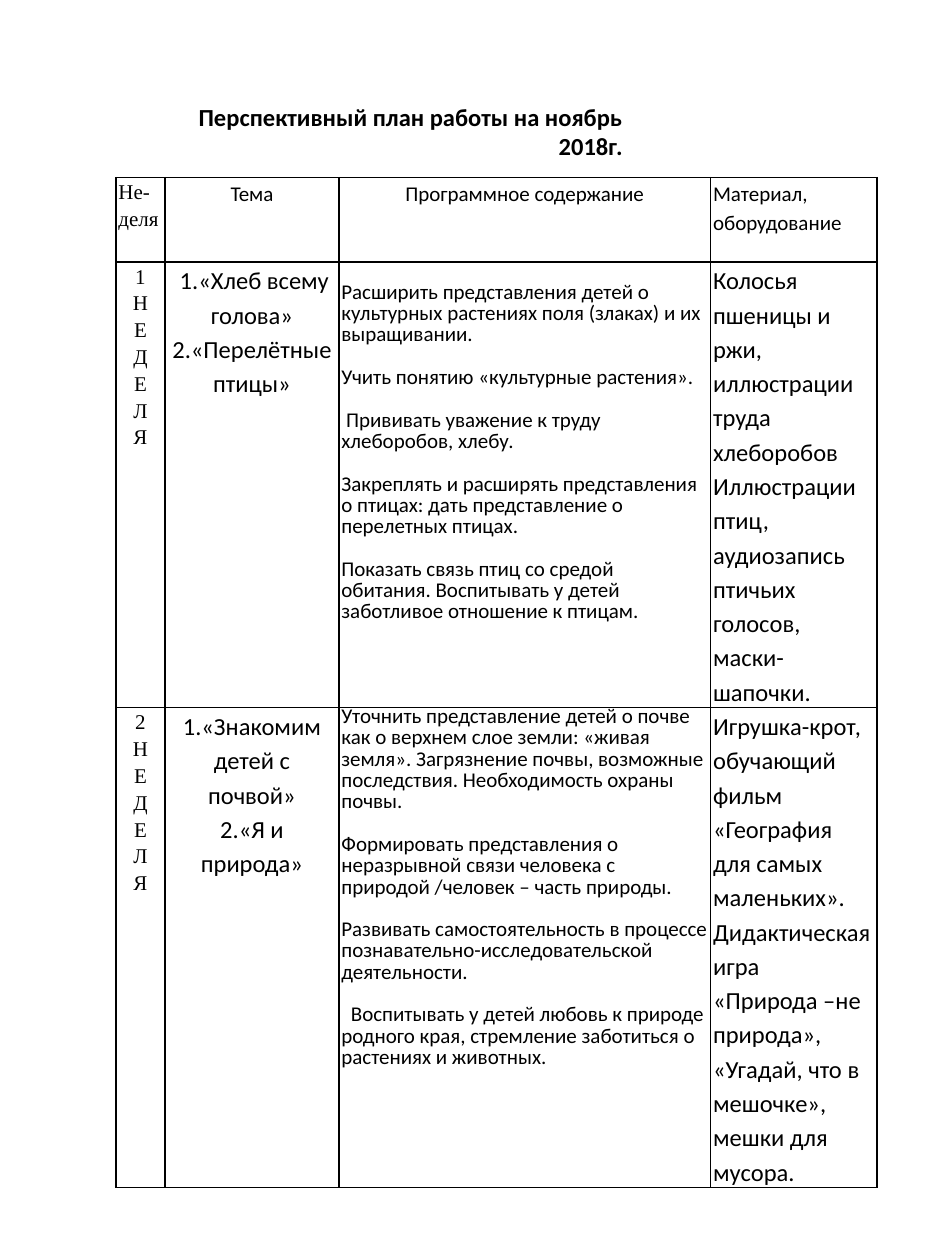
from dataclasses import dataclass

from lxml.etree import SubElement
from pptx import Presentation
from pptx.dml.color import RGBColor
from pptx.enum.text import MSO_ANCHOR, PP_ALIGN
from pptx.oxml.ns import qn
from pptx.util import Inches, Pt

BLACK, WHITE = "000000", "FFFFFF"
LINE_PITCH = Pt(12.2)
SPACE_WIDTH = 2.7
COLUMN_WIDTHS = [0.39, 1.38, 2.95, 1.32]
ROW_HEIGHTS = [0.67, 3.53, 3.66]


@dataclass
class CellText:
    """Paragraphs of one table cell and their formatting."""
    paragraphs: list[str]
    size: int = 12
    font: str = "Calibri"
    centered: bool = False
    spaced: bool = False
    top_margin: int = 0


def color(value: str) -> RGBColor:
    """Turn a hex string into a colour."""
    return RGBColor.from_string(value)


def set_font(paragraph, name: str, size: int, bold: bool = False) -> None:
    """Set the font of a whole paragraph."""
    font = paragraph.font
    font.name, font.size, font.bold = name, Pt(size), bold
    font.color.rgb = color(BLACK)


def add_borders(cell) -> None:
    """Draw a thin black line on every side of a cell."""
    properties = cell._tc.get_or_add_tcPr()
    for side in ("lnL", "lnR", "lnT", "lnB"):
        line = SubElement(properties, qn(f"a:{side}"), w=str(Pt(1)))
        fill = SubElement(line, qn("a:solidFill"))
        SubElement(fill, qn("a:srgbClr"), val=BLACK)


def fill_cell(cell, content: CellText) -> None:
    """Write and format one table cell."""
    add_borders(cell)
    cell.fill.solid()
    cell.fill.fore_color.rgb = color(WHITE)
    cell.margin_left = cell.margin_right = Inches(0.02)
    cell.margin_top, cell.margin_bottom = content.top_margin, 0
    frame = cell.text_frame
    for index, text in enumerate(content.paragraphs):
        paragraph = frame.add_paragraph() if index else frame.paragraphs[0]
        words = text.lstrip(" ")
        paragraph.text = words
        paragraph.alignment = PP_ALIGN.CENTER if content.centered else PP_ALIGN.LEFT
        paragraph.line_spacing = LINE_PITCH if content.spaced else 1.15
        if content.spaced and index:
            paragraph.space_before = LINE_PITCH
        if words != text:
            indent = Pt(SPACE_WIDTH * (len(text) - len(words)))
            paragraph._p.get_or_add_pPr().set("indent", str(indent))
        set_font(paragraph, content.font, content.size)


def week(number: int) -> CellText:
    """Spell a week label downwards, one letter a line."""
    return CellText(list(f"{number}НЕДЕЛЯ"), font="Times New Roman", centered=True)


def topics(*paragraphs: str) -> CellText:
    """Describe a cell of the topic column."""
    return CellText(list(paragraphs), size=14, centered=True)


def goals(*paragraphs: str, top_margin: int = 0) -> CellText:
    """Describe a cell of the programme column."""
    return CellText(list(paragraphs), spaced=True, top_margin=top_margin)


def materials(*paragraphs: str) -> CellText:
    """Describe a cell of the materials column."""
    return CellText(list(paragraphs), size=14)


PLAN = [
    [
        CellText(["Не-деля"], font="Times New Roman"),
        CellText(["Тема"], centered=True),
        CellText(["Программное содержание"], centered=True),
        CellText(["Материал, оборудование"]),
    ],
    [
        week(1),
        topics(" 1.«Хлеб всему голова»", "2.«Перелётные птицы»"),
        goals(
            "Расширить представления детей о культурных растениях поля (злаках) и их выращивании.",
            "Учить понятию «культурные растения».",
            " Прививать уважение к труду хлеборобов, хлебу.",
            "Закреплять и расширять представления о птицах: дать представление о перелетных птицах.",
            "Показать связь птиц со средой обитания. Воспитывать у детей заботливое отношение к птицам.",
            top_margin=LINE_PITCH,
        ),
        materials(
            "Колосья пшеницы и ржи, иллюстрации труда хлеборобов",
            "Иллюстрации птиц, аудиозапись птичьих голосов, маски-шапочки.",
        ),
    ],
    [
        week(2),
        topics("1.«Знакомим детей с почвой»", "2.«Я и природа»"),
        goals(
            "Уточнить представление детей о почве как о верхнем слое земли: «живая земля». "
            "Загрязнение почвы, возможные последствия. Необходимость охраны почвы.",
            "Формировать представления о неразрывной связи человека с природой /человек – часть природы.",
            "Развивать самостоятельность в процессе познавательно-исследовательской деятельности.",
            "  Воспитывать у детей любовь к природе родного края, стремление заботиться о растениях и животных.",
        ),
        materials(
            "Игрушка-крот, обучающий фильм «География для самых маленьких».",
            "Дидактическая игра",
            "«Природа –не природа»,",
            "«Угадай, что в мешочке», мешки для мусора.",
        ),
    ],
]


def add_plan(slide) -> None:
    """Add the table with the monthly plan."""
    shape = slide.shapes.add_table(
        len(ROW_HEIGHTS), len(COLUMN_WIDTHS), Inches(0.92), Inches(1.41),
        Inches(sum(COLUMN_WIDTHS)), Inches(sum(ROW_HEIGHTS)),
    )
    table = shape.table
    table.first_row = table.horz_banding = False
    for column, width in zip(table.columns, COLUMN_WIDTHS):
        column.width = Inches(width)
    for row, height, contents in zip(table.rows, ROW_HEIGHTS, PLAN):
        row.height = Inches(height)
        for cell, content in zip(row.cells, contents):
            fill_cell(cell, content)


def add_title(slide) -> None:
    """Add the right-aligned heading."""
    shape = slide.shapes.add_textbox(Inches(1.09), Inches(0.76), Inches(3.95), Inches(0.64))
    frame = shape.text_frame
    frame.word_wrap = True
    frame.vertical_anchor = MSO_ANCHOR.TOP
    paragraph = frame.paragraphs[0]
    paragraph.text = "Перспективный план работы на ноябрь 2018г."
    paragraph.alignment = PP_ALIGN.RIGHT
    set_font(paragraph, "Calibri", 14, bold=True)


def main() -> None:
    """Build and save the presentation."""
    presentation = Presentation()
    presentation.slide_width, presentation.slide_height = Inches(7.5), Inches(10)
    slide = presentation.slides.add_slide(presentation.slide_layouts[6])
    add_plan(slide)
    add_title(slide)
    presentation.save("out.pptx")


if __name__ == "__main__":
    main()
